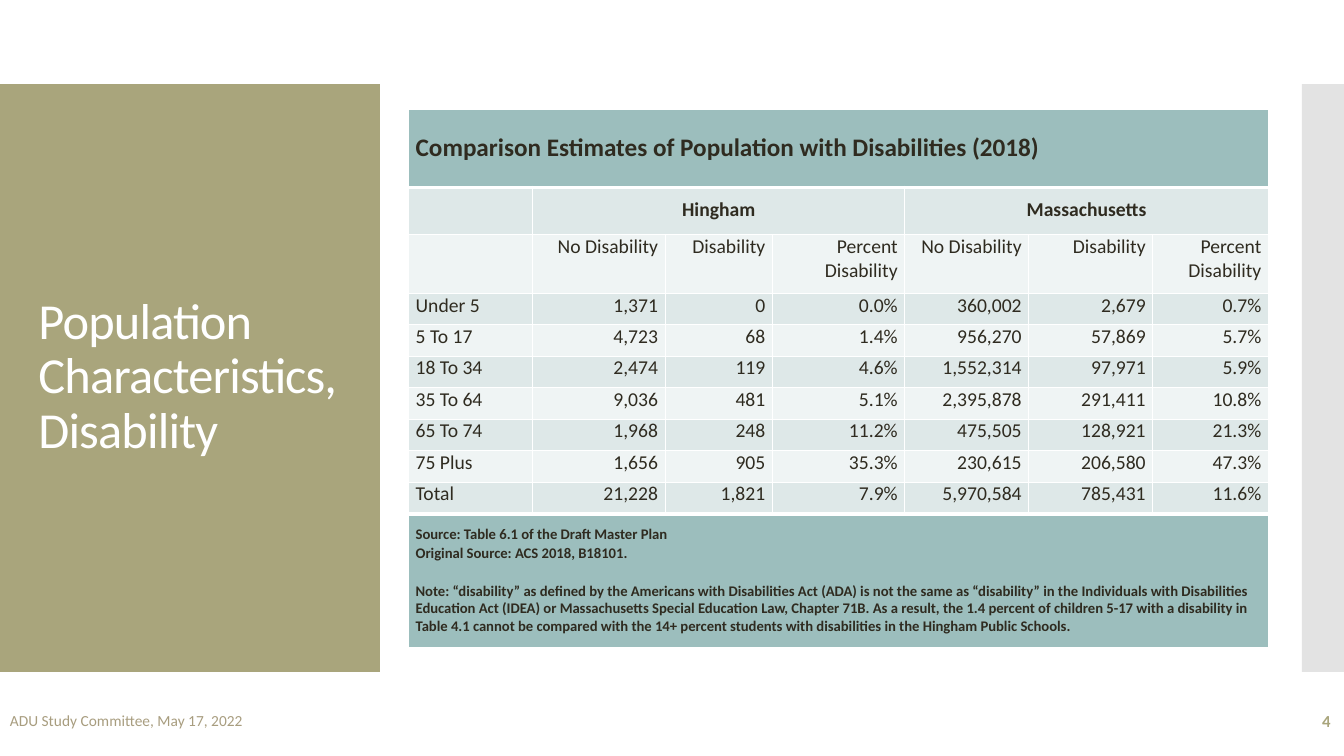
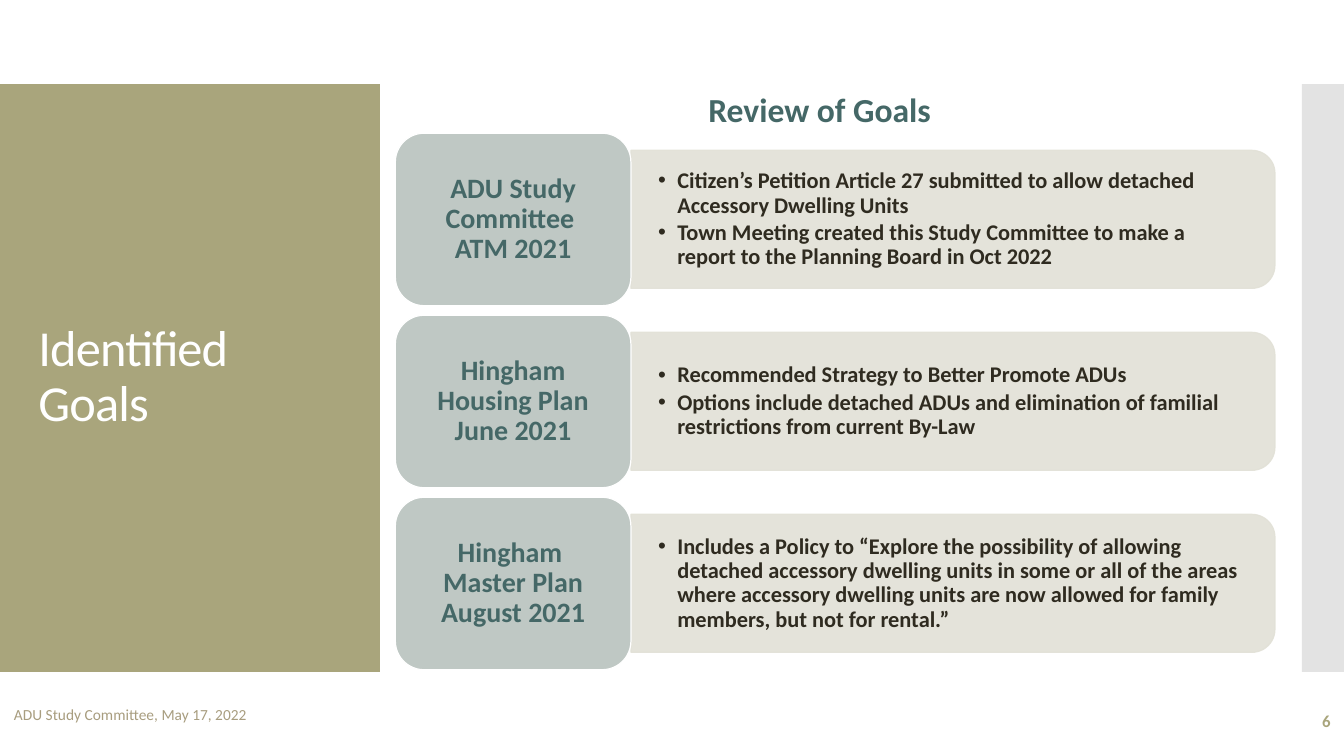
"""Build the two committee slides on disability figures and identified goals."""
import dataclasses
import typing

import lxml.etree
import pptx
import pptx.dml.color
import pptx.enum.shapes
import pptx.enum.text
import pptx.oxml.ns
import pptx.util

Pt = pptx.util.Pt
RGBColor = pptx.dml.color.RGBColor
Align = pptx.enum.text.PP_ALIGN
Anchor = pptx.enum.text.MSO_ANCHOR
Preset = pptx.enum.shapes.MSO_SHAPE
qn = pptx.oxml.ns.qn

WHITE = RGBColor(0xFF, 0xFF, 0xFF)
OLIVE = RGBColor(0xA9, 0xA5, 0x7C)
GREY = RGBColor(0xC8, 0xC8, 0xC8)
TAN = RGBColor(0xA8, 0x9D, 0x7F)
INK = RGBColor(0x2F, 0x2B, 0x20)
TEAL = RGBColor(0x45, 0x68, 0x67)
TABLE_BAND = RGBColor(0x9C, 0xBE, 0xBD)
ROW_DARK = RGBColor(0xDE, 0xE8, 0xE8)
ROW_LIGHT = RGBColor(0xEF, 0xF4, 0xF4)
PANEL_FILL = RGBColor(0xE2, 0xE1, 0xD7)
CHIP_FILL = RGBColor(0xBF, 0xC8, 0xC4)

FONT = "Calibri"
FOOTER = "ADU Study Committee, May 17, 2022"


class Rect(typing.NamedTuple):
    """Hold a position and size in points."""

    left: float
    top: float
    width: float
    height: float

    def lengths(self) -> list[pptx.util.Length]:
        """Return the four values as lengths."""
        return [Pt(value) for value in self]


@dataclasses.dataclass(frozen=True)
class TextStyle:
    """Describe how a piece of text looks."""

    size: float
    color: RGBColor
    bold: bool = False
    align: Align = Align.LEFT
    line: typing.Any = 1.0
    before: float = 0
    after: float = 0


@dataclasses.dataclass(frozen=True)
class Goal:
    """Describe one goal: its label lines and its bullet points."""

    label: list[str]
    points: list[str]


TITLE_BOX = Rect(20.2, 88.6, 232, 362.2)
TITLE = TextStyle(36, WHITE, line=0.9)
FOOTER_TEXT = TextStyle(11, TAN)
NUMBER_TEXT = TextStyle(12, OLIVE, bold=True, align=Align.RIGHT)
HEADING = TextStyle(24, TEAL, bold=True, align=Align.CENTER)
CHIP_TEXT = TextStyle(20, TEAL, bold=True, align=Align.CENTER, line=0.9)
POINT_TEXT = TextStyle(16, INK, bold=True, line=0.9, after=2.4)
TABLE_TITLE = TextStyle(18, INK, bold=True, after=6)
PLACE_TEXT = TextStyle(14, INK, bold=True, align=Align.CENTER, line=Pt(15), before=6)
ROW_LABEL = TextStyle(14, INK, after=1)
ROW_VALUE = dataclasses.replace(ROW_LABEL, align=Align.RIGHT)
NOTE_TEXT = TextStyle(10.5, INK, bold=True, after=1)

COLUMNS = [88.6, 94.6, 76.6, 94.6, 88.6, 88.6, 82.6]
ROWS = [56.2, 33.8, 41.8, *[22.5] * 7, 96]
MEASURES = ["No Disability", "Disability", "Percent Disability"]
TABLE_TEXT = [
    ["Comparison Estimates of Population with Disabilities (2018)", *[""] * 6],
    ["", "Hingham", "", "", "Massachusetts", "", ""],
    ["", *MEASURES * 2],
    ["Under 5", "1,371", "0", "0.0%", "360,002", "2,679", "0.7%"],
    ["5 To 17", "4,723", "68", "1.4%", "956,270", "57,869", "5.7%"],
    ["18 To 34", "2,474", "119", "4.6%", "1,552,314", "97,971", "5.9%"],
    ["35 To 64", "9,036", "481", "5.1%", "2,395,878", "291,411", "10.8%"],
    ["65 To 74", "1,968", "248", "11.2%", "475,505", "128,921", "21.3%"],
    ["75 Plus", "1,656", "905", "35.3%", "230,615", "206,580", "47.3%"],
    ["Total", "21,228", "1,821", "7.9%", "5,970,584", "785,431", "11.6%"],
    [
        "Source: Table 6.1 of the Draft Master Plan\n"
        "Original Source: ACS 2018, B18101.\n"
        "Note: “disability” as defined by the Americans with Disabilities Act (ADA) is not "
        "the same as “disability” in the Individuals with Disabilities Education Act (IDEA) "
        "or Massachusetts Special Education Law, Chapter 71B. As a result, the 1.4 percent of "
        "children 5-17 with a disability in Table 4.1 cannot be compared with the 14+ percent "
        "students with disabilities in the Hingham Public Schools.",
        *[""] * 6,
    ],
]
MERGES = [(0, 0, 6), (1, 1, 3), (1, 4, 6), (10, 0, 6)]
LAST_ROW = len(ROWS) - 1

GOALS = [
    Goal(
        ["ADU Study Committee ", "ATM 2021"],
        [
            "Citizen’s Petition Article 27 submitted to allow detached Accessory Dwelling Units",
            "Town Meeting created this Study Committee to make a report to the Planning Board "
            "in Oct 2022",
        ],
    ),
    Goal(
        ["Hingham Housing Plan", "June 2021"],
        [
            "Recommended Strategy to Better Promote ADUs",
            "Options include detached ADUs and elimination of familial restrictions from "
            "current By-Law",
        ],
    ),
    Goal(
        ["Hingham ", "Master Plan", "August 2021"],
        [
            "Includes a Policy to “Explore the possibility of allowing detached accessory "
            "dwelling units in some or all of the areas where accessory dwelling units are now "
            "allowed for family members, but not for rental.”",
        ],
    ),
]
GOAL_PITCH = 130


def assign(target: typing.Any, formats: dict[str, typing.Any]) -> None:
    """Set each named attribute of the target."""
    for name, value in formats.items():
        setattr(target, name, value)


def write(frame: typing.Any, lines: list[str], style: TextStyle) -> None:
    """Fill a text frame with one styled paragraph per line."""
    frame.text = "\n".join(lines)
    para_formats = {
        "alignment": style.align,
        "line_spacing": style.line,
        "space_before": Pt(style.before),
        "space_after": Pt(style.after),
    }
    font_formats = {"name": FONT, "size": Pt(style.size), "bold": style.bold}
    for para in frame.paragraphs:
        assign(para, para_formats)
        for span in para.runs:
            assign(span.font, font_formats)
            span.font.color.rgb = style.color


def set_frame(frame: typing.Any, anchor: Anchor, across: float = 7.2, down: float = 3.6) -> None:
    """Set wrapping, anchor and insets of a text frame."""
    assign(frame, {
        "word_wrap": True,
        "auto_size": pptx.enum.text.MSO_AUTO_SIZE.NONE,
        "vertical_anchor": anchor,
        "margin_left": Pt(across),
        "margin_right": Pt(across),
        "margin_top": Pt(down),
        "margin_bottom": Pt(down),
    })


def place(box: typing.Any, rect: Rect) -> None:
    """Move and size a placeholder."""
    assign(box, dict(zip(("left", "top", "width", "height"), rect.lengths())))


def add_box(
    page: typing.Any,
    preset: Preset,
    rect: Rect,
    fill: RGBColor,
    line: RGBColor | None = None,
    opacity: int = 100,
) -> typing.Any:
    """Draw a flat filled shape."""
    box = page.shapes.add_shape(preset, *rect.lengths())
    box.shadow.inherit = False
    box.fill.solid()
    box.fill.fore_color.rgb = fill
    if line is None:
        box.line.fill.background()
    else:
        box.line.color.rgb = line
        box.line.width = Pt(0.85)
    if opacity < 100:
        for color in box.element.spPr.iter(qn("a:srgbClr")):
            lxml.etree.SubElement(color, qn("a:alpha"), val=str(opacity * 1000))
    return box


def add_label(page: typing.Any, rect: Rect, text: str, style: TextStyle) -> None:
    """Add a text box with one vertically centred line."""
    box = page.shapes.add_textbox(*rect.lengths())
    set_frame(box.text_frame, Anchor.MIDDLE)
    write(box.text_frame, [text], style)


def add_master_bands(deck: typing.Any, page: typing.Any) -> None:
    """Put the two side bands behind everything on the slide master."""
    bands = [
        add_box(page, Preset.RECTANGLE, Rect(0, 60, 271.4, 420), OLIVE),
        add_box(page, Preset.RECTANGLE, Rect(930, 60, 30, 420), GREY, opacity=50),
    ]
    for index, band in enumerate(bands):
        next(band.element.iter(qn("p:cNvPr"))).set("id", str(20 + index))
        deck.slide_master.shapes.element.insert(2 + index, band.element)


def add_frame(page: typing.Any, title: str, number: int, footer: Rect) -> None:
    """Fill in the title, footer and page number."""
    box = page.shapes.title
    place(box, TITLE_BOX)
    set_frame(box.text_frame, Anchor.MIDDLE)
    write(box.text_frame, [title], TITLE)
    for properties in box.element.iter(qn("a:rPr")):
        properties.set("spc", "-60")
    add_label(page, footer, FOOTER, FOOTER_TEXT)
    add_label(page, Rect(837.4, 500.4, 120.2, 28.8), str(number), NUMBER_TEXT)


def add_borders(element: typing.Any, row: int) -> None:
    """Give a table cell white borders, thick beside the title and note rows."""
    thick = {("lnB", 0), ("lnT", 1), ("lnB", LAST_ROW - 1), ("lnT", LAST_ROW)}
    for edge in ("lnL", "lnR", "lnT", "lnB"):
        width = Pt(3 if (edge, row) in thick else 1)
        line = lxml.etree.SubElement(element.get_or_add_tcPr(), qn(f"a:{edge}"), w=str(width))
        fill = lxml.etree.SubElement(line, qn("a:solidFill"))
        lxml.etree.SubElement(fill, qn("a:srgbClr"), val=str(WHITE))


def cell_style(row: int, column: int) -> TextStyle:
    """Choose the text style of a table cell."""
    special = {0: TABLE_TITLE, 1: PLACE_TEXT, LAST_ROW: NOTE_TEXT}
    return special.get(row, ROW_VALUE if column else ROW_LABEL)


def add_disability_table(page: typing.Any) -> None:
    """Add the comparison table."""
    rect = Rect(291.9, 77.8, sum(COLUMNS), sum(ROWS))
    holder = page.shapes.add_table(len(ROWS), len(COLUMNS), *rect.lengths())
    table = holder.table
    assign(table, {"first_row": False, "horz_banding": False})
    for column, width in zip(table.columns, COLUMNS):
        column.width = Pt(width)
    for row, height in zip(table.rows, ROWS):
        row.height = Pt(height)
    for row, first, last in MERGES:
        table.cell(row, first).merge(table.cell(row, last))
    for index, element in enumerate(holder.element.iter(qn("a:tc"))):
        row, column = divmod(index, len(COLUMNS))
        cell = table.cell(row, column)
        add_borders(element, row)
        cell.fill.solid()
        banded = ROW_DARK if row % 2 else ROW_LIGHT
        cell.fill.fore_color.rgb = TABLE_BAND if row in (0, LAST_ROW) else banded
        assign(cell, {
            "margin_left": Pt(5),
            "margin_right": Pt(5),
            "margin_top": Pt(8.3 if row == LAST_ROW else 0),
            "margin_bottom": Pt(0),
            "vertical_anchor": Anchor.MIDDLE if row < 2 else Anchor.TOP,
        })
        if TABLE_TEXT[row][column]:
            write(cell.text_frame, [TABLE_TEXT[row][column]], cell_style(row, column))
    table.cell(LAST_ROW, 0).text_frame.paragraphs[-1].space_before = Pt(13.2)


def add_goal(page: typing.Any, goal: Goal, holder: typing.Any, shift: float) -> None:
    """Draw one goal: panel, bullet list and label chip."""
    across, down = 460, 98.6
    panel_rect = Rect(450.7 + (across - down) / 2, 107.4 + shift + (down - across) / 2, down, across)
    panel = add_box(page, Preset.ROUND_2_SAME_RECTANGLE, panel_rect, PANEL_FILL, PANEL_FILL, 90)
    panel.rotation = 90
    place(holder, Rect(450.7, 112.2 + shift, 455, 89.3))
    set_frame(holder.text_frame, Anchor.MIDDLE, 19.4, 10.1)
    write(holder.text_frame, goal.points, POINT_TEXT)
    for para in holder.element.iter(qn("a:p")):
        properties = para.get_or_add_pPr()
        properties.set("marL", str(Pt(13.7)))
        properties.set("indent", str(-Pt(13.7)))
        lxml.etree.SubElement(properties, qn("a:buChar"), char="•")
    page.shapes.element.append(holder.element)
    chip_rect = Rect(282.4, 95.2 + shift, 168.3, 123.2)
    chip = add_box(page, Preset.ROUNDED_RECTANGLE, chip_rect, CHIP_FILL, WHITE)
    set_frame(chip.text_frame, Anchor.MIDDLE, 12.2, 9)
    write(chip.text_frame, goal.label, CHIP_TEXT)


def main() -> None:
    """Build and save the deck."""
    deck = pptx.Presentation()
    assign(deck, {"slide_width": Pt(960), "slide_height": Pt(540)})

    page = deck.slides.add_slide(deck.slide_layouts.get_by_name("Title Only"))
    add_master_bands(deck, page)
    add_frame(page, "Population \vCharacteristics, Disability", 4, Rect(0, 500.4, 770.4, 28.8))
    add_disability_table(page)

    page = deck.slides.add_slide(deck.slide_layouts.get_by_name("Comparison"))
    add_frame(page, "Identified Goals", 6, Rect(2.9, 491.8, 465, 37.4))
    heading, *lists = list(page.placeholders)[1:]
    place(heading, Rect(285.8, 59.8, 604.8, 36))
    set_frame(heading.text_frame, Anchor.TOP)
    write(heading.text_frame, ["Review of Goals "], HEADING)
    for index, (goal, holder) in enumerate(zip(GOALS, lists)):
        add_goal(page, goal, holder, index * GOAL_PITCH)

    deck.save("out.pptx")


if __name__ == "__main__":
    main()
